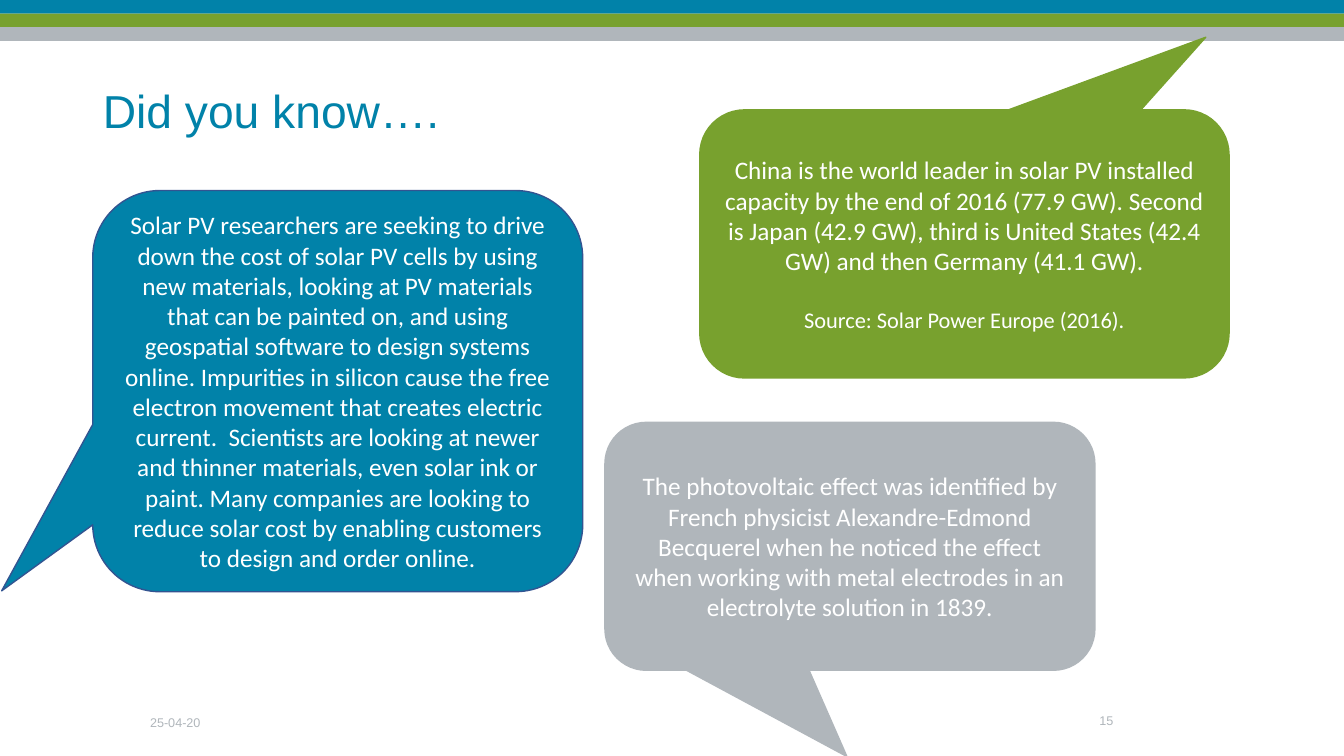
"""Build the "Did you know" slide with three callouts on solar power."""
from pptx import Presentation
from pptx.dml.color import RGBColor
from pptx.enum import shapes, text
from pptx.util import Inches, Pt

BLUE, GREEN, GREY, WHITE = "0182A9", "78A12E", "B0B6BB", "FFFFFF"
WIDTH, HEIGHT = 13.33, 7.5
BAND_STEP = 0.135
LEFT, CENTER, RIGHT = text.PP_ALIGN.LEFT, text.PP_ALIGN.CENTER, text.PP_ALIGN.RIGHT

BANDS = [BLUE, GREEN, GREY]
TITLE = ("Did you know….", (0.92, 0.4, 11.5, 1.45))
FOOTERS = [
    ("25-04-20", (1.39, 6.98, 2.53, 0.37), LEFT),
    ("15", (9.42, 6.95, 1.72, 0.4), RIGHT),
]
CALLOUTS = [
    {
        "place": (0.92, 1.89, 4.86, 3.98), "tip": (-0.686, 0.498),
        "fill": BLUE, "line": "325491",
        "lines": [(
            "Solar PV researchers are seeking to drive down the cost of solar PV cells "
            "by using new materials, looking at PV materials that can be painted on, "
            "and using geospatial software to design systems online. Impurities in "
            "silicon cause the free electron movement that creates electric current.  "
            "Scientists are looking at newer and thinner materials, even solar ink or "
            "paint. Many companies are looking to reduce solar cost by enabling "
            "customers to design and order online.", 18, 0)],
    },
    {
        "place": (6.94, 1.09, 5.25, 2.66), "tip": (0.456, -0.771),
        "fill": GREEN, "line": GREEN,
        "lines": [
            ("China is the world leader in solar PV installed capacity by the end of "
             "2016 (77.9 GW). Second is Japan (42.9 GW), third is United States "
             "(42.4 GW) and then Germany (41.1 GW).", 18, 0),
            ("Source: Solar Power Europe (2016).", 16, 22)],
    },
    {
        "place": (6, 4.19, 4.86, 2.46), "tip": (-0.006, 0.848),
        "fill": GREY, "line": GREY,
        "lines": [(
            "The photovoltaic effect was identified by French physicist "
            "Alexandre-Edmond Becquerel when he noticed the effect when working with "
            "metal electrodes in an electrolyte solution in 1839.", 18, 0)],
    },
]


def color(value):
    return RGBColor.from_string(value)


def inches(place):
    return [Inches(length) for length in place]


def apply(target, values):
    for name, value in values.items():
        setattr(target, name, value)


def write(box, lines, align, font, ink, spacing=1.0):
    frame = box.text_frame
    apply(frame, {"word_wrap": True, "auto_size": text.MSO_AUTO_SIZE.NONE,
                  "vertical_anchor": text.MSO_ANCHOR.MIDDLE})
    for index, (words, size, before) in enumerate(lines):
        para = frame.add_paragraph() if index else frame.paragraphs[0]
        apply(para, {"alignment": align, "line_spacing": spacing,
                     "space_before": Pt(before)})
        span = para.add_run()
        span.text = words
        apply(span.font, {"name": font, "size": Pt(size)})
        span.font.color.rgb = color(ink)


def add_filled(page, kind, place, fill, line=None):
    shape = page.shapes.add_shape(kind, *inches(place))
    shape.shadow.inherit = False
    shape.fill.solid()
    shape.fill.fore_color.rgb = color(fill)
    if line:
        shape.line.color.rgb = color(line)
        shape.line.width = Pt(1)
    else:
        shape.line.fill.background()
    return shape


def main():
    deck = Presentation()
    apply(deck, {"slide_width": Inches(WIDTH), "slide_height": Inches(HEIGHT)})
    page = deck.slides.add_slide(deck.slide_layouts[5])

    for row, fill in enumerate(BANDS):
        add_filled(page, shapes.MSO_SHAPE.RECTANGLE,
                   (0, row * BAND_STEP, WIDTH, BAND_STEP), fill)

    words, place = TITLE
    title = page.shapes.title
    apply(title, dict(zip(("left", "top", "width", "height"), inches(place))))
    write(title, [(words, 33, 0)], LEFT, "Arial", BLUE, 0.9)

    for words, place, align in FOOTERS:
        box = page.shapes.add_textbox(*inches(place))
        write(box, [(words, 9, 0)], align, "Arial", GREY)

    for item in CALLOUTS:
        callout = add_filled(page, shapes.MSO_SHAPE.ROUNDED_RECTANGULAR_CALLOUT,
                             item["place"], item["fill"], item["line"])
        for index, value in enumerate((*item["tip"], 0.167)):
            callout.adjustments[index] = value
        write(callout, item["lines"], CENTER, "Calibri", WHITE)

    deck.save("out.pptx")


if __name__ == "__main__":
    main()
